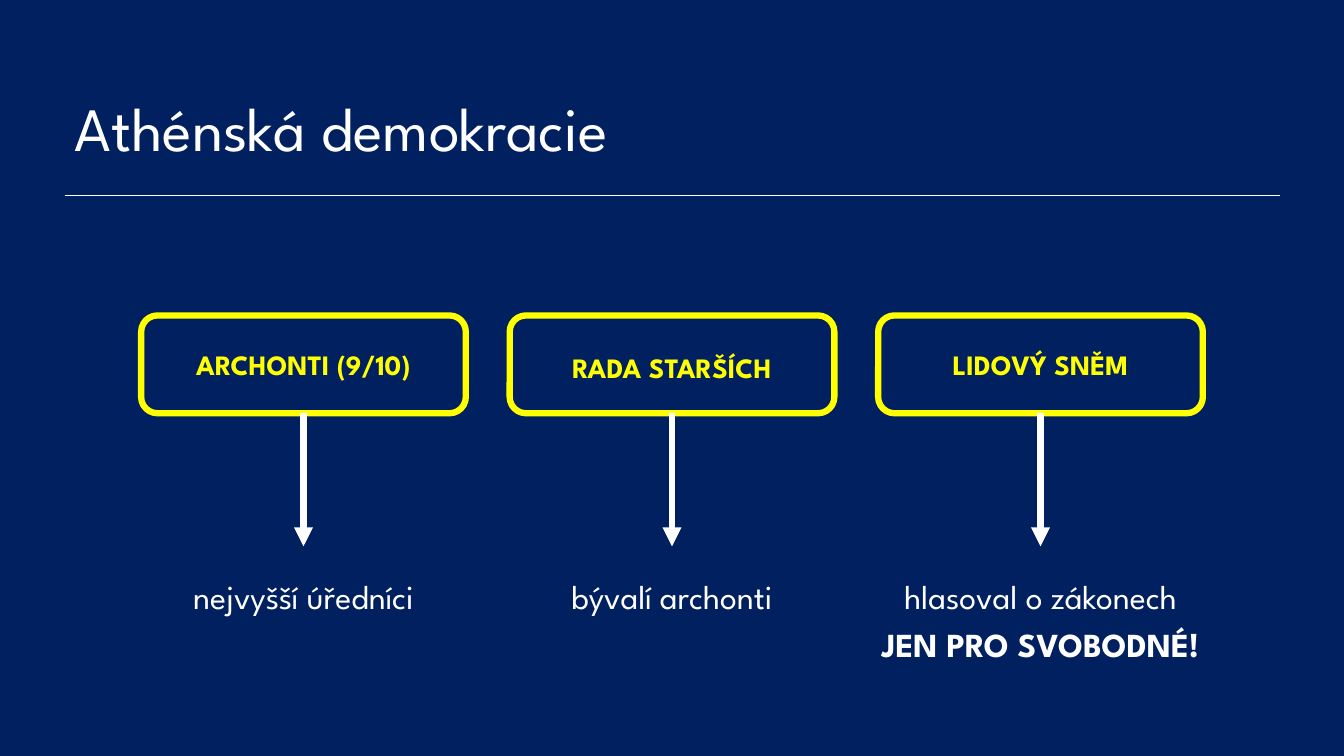
from dataclasses import dataclass

from pptx import Presentation
from pptx.dml.color import RGBColor
from pptx.enum.shapes import MSO_CONNECTOR as Connector, MSO_SHAPE as Shape
from pptx.enum.text import MSO_ANCHOR as Anchor, MSO_AUTO_SIZE as AutoSize, PP_ALIGN as Align
from pptx.oxml.ns import qn
from pptx.shapes.autoshape import Shape as AutoShape
from pptx.shapes.connector import Connector as Line
from pptx.slide import Slide
from pptx.util import Inches, Pt
from lxml.etree import SubElement


@dataclass(frozen=True)
class Theme:
    font: str = "League Spartan"
    background: RGBColor = RGBColor(0x00, 0x20, 0x60)
    text: RGBColor = RGBColor(0xFF, 0xFF, 0xFF)
    accent: RGBColor = RGBColor(0xFF, 0xFF, 0x00)
    title_size: int = 44
    institution_size: int = 20
    role_size: int = 24
    rule_width: float = 0.5
    stroke_width: float = 4.5


@dataclass(frozen=True)
class Institution:
    name: str
    role: str
    role_width: float
    role_height: float = 0.5
    warning: str = ""
    name_drop: float = 0.0


THEME = Theme()

# Grid in inches: three equal columns, rows from top to bottom
FIRST_CENTER, COLUMN_PITCH = 3.01, 3.655
BOX_WIDTH, BOX_HEIGHT = 3.22, 0.97
NAME_WIDTH, NAME_HEIGHT = 2.97, 0.44
BOX_ROW, NAME_ROW, ARROW_END_ROW, ROLE_ROW = 3.13, 3.4, 5.42, 5.66
RULE_LEFT, RULE_RIGHT, RULE_ROW = 0.64, 12.7, 1.94

INSTITUTIONS = [
    Institution("ARCHONTI (9/10)", "nejvyšší úředníci", 2.94),
    Institution("RADA STARŠÍCH", "bývalí archonti", 3.5, name_drop=0.03),
    Institution("LIDOVÝ SNĚM", "hlasoval o zákonech", 3.69, 0.99, "JEN PRO SVOBODNÉ!"),
]


def style_paragraph(paragraph, size: int, color: RGBColor, bold: bool = False,
                    align: Align = Align.CENTER) -> None:
    paragraph.alignment = align
    font = paragraph.font
    font.name, font.size, font.bold = THEME.font, Pt(size), bold
    font.color.rgb = color


def add_title(slide: Slide, text: str) -> None:
    title = slide.shapes.title
    title.left, title.top = Inches(RULE_LEFT), Inches(0.93)
    title.width, title.height = Inches(11.5), Inches(0.99)
    title.text_frame.text = text
    title.text_frame.vertical_anchor = Anchor.TOP
    heading = title.text_frame.paragraphs[0]
    heading.line_spacing = 0.9
    style_paragraph(heading, THEME.title_size, THEME.text, align=Align.LEFT)


def add_line(slide: Slide, x1: float, y1: float, x2: float, y2: float, width: float) -> Line:
    line = slide.shapes.add_connector(
        Connector.STRAIGHT, Inches(x1), Inches(y1), Inches(x2), Inches(y2))
    line.line.color.rgb = THEME.text
    line.line.width = Pt(width)
    SubElement(line._element.spPr, qn("a:effectLst"))
    return line


def add_box(slide: Slide, center: float) -> AutoShape:
    box = slide.shapes.add_shape(
        Shape.ROUNDED_RECTANGLE, Inches(center - BOX_WIDTH / 2), Inches(BOX_ROW),
        Inches(BOX_WIDTH), Inches(BOX_HEIGHT))
    box.shadow.inherit = False
    box.fill.background()
    box.line.color.rgb = THEME.accent
    box.line.width = Pt(THEME.stroke_width)
    return box


def add_arrow(slide: Slide, box: AutoShape, center: float) -> None:
    arrow = add_line(slide, center, BOX_ROW + BOX_HEIGHT, center, ARROW_END_ROW,
                     THEME.stroke_width)
    arrow.begin_connect(box, 2)
    SubElement(arrow.line._get_or_add_ln(), qn("a:tailEnd"), type="triangle")


def add_text(slide: Slide, center: float, top: float, width: float, height: float):
    frame = slide.shapes.add_textbox(
        Inches(center - width / 2), Inches(top), Inches(width), Inches(height)).text_frame
    frame.word_wrap = True
    frame.auto_size = AutoSize.SHAPE_TO_FIT_TEXT
    return frame


def add_institution(slide: Slide, institution: Institution, center: float) -> None:
    box = add_box(slide, center)

    name = add_text(slide, center, NAME_ROW + institution.name_drop, NAME_WIDTH, NAME_HEIGHT)
    name.text = institution.name
    style_paragraph(name.paragraphs[0], THEME.institution_size, THEME.accent, bold=True)

    add_arrow(slide, box, center)

    role = add_text(slide, center, ROLE_ROW, institution.role_width, institution.role_height)
    role.text = institution.role
    style_paragraph(role.paragraphs[0], THEME.role_size, THEME.text)
    if institution.warning:
        role.paragraphs[0].space_after = Pt(6)
        warning = role.add_paragraph()
        warning.text = institution.warning
        style_paragraph(warning, THEME.role_size, THEME.text, bold=True)


def main() -> None:
    deck = Presentation()
    deck.slide_width, deck.slide_height = Inches(13.33), Inches(7.5)
    slide = deck.slides.add_slide(deck.slide_layouts[5])
    slide.background.fill.solid()
    slide.background.fill.fore_color.rgb = THEME.background

    # Heading and rule
    add_title(slide, "Athénská demokracie")
    add_line(slide, RULE_LEFT, RULE_ROW, RULE_RIGHT, RULE_ROW, THEME.rule_width)

    # One column per institution
    for column, institution in enumerate(INSTITUTIONS):
        add_institution(slide, institution, FIRST_CENTER + column * COLUMN_PITCH)

    deck.save("out.pptx")


if __name__ == "__main__":
    main()
